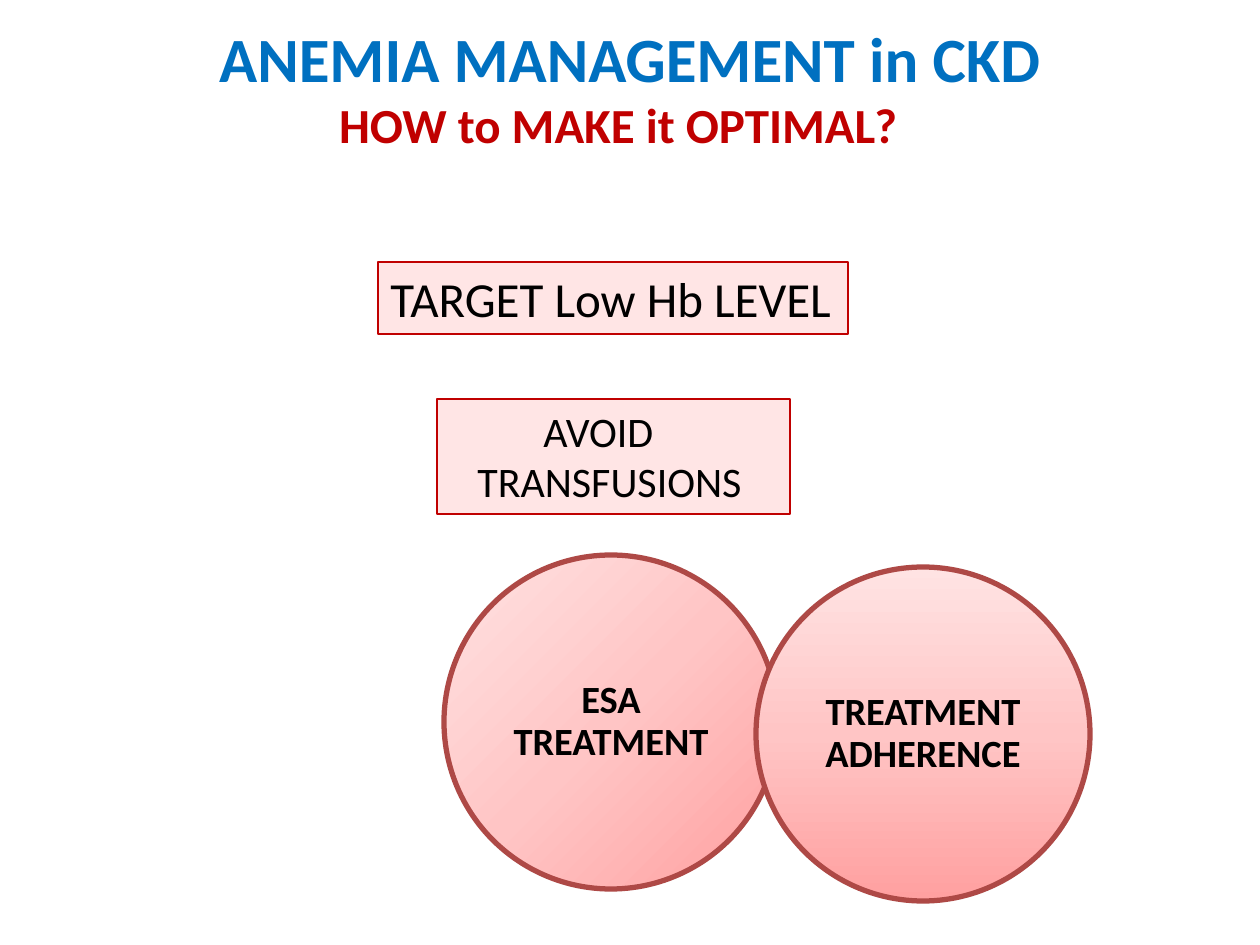
"""Build the slide on optimal anemia management in CKD."""
from dataclasses import dataclass

from lxml import etree
from pptx import Presentation
from pptx import util as u
from pptx.dml.color import RGBColor
from pptx.enum import shapes, text
from pptx.oxml import ns

PX = 914400 / 126


@dataclass(frozen=True)
class Theme:
    """Colours and type sizes."""
    font: str = "Calibri"
    ink: str = "000000"
    title: str = "0070C0"
    accent: str = "C00000"
    box: str = "FFE5E5"
    ring: str = "AE4946"
    stops: tuple = ((0, "FFA0A0"), (50, "FFC5C5"), (100, "FFE3E3"))
    title_size: int = 36
    large: int = 28
    medium: int = 24
    small: int = 22


THEME = Theme()
DIAGONAL = ("path", {"path": "circle"})
VERTICAL = ("lin", {"ang": str(270 * 60000), "scaled": "0"})


def px(length):
    """Turn pixels into EMU."""
    return u.Emu(round(length * PX))


def write(frame, lines, align, anchor, bold=False, spacing=None):
    """Write lines of (words, size, colour, left indent, right indent)."""
    frame.word_wrap = True
    frame.vertical_anchor = anchor
    for number, (words, size, color, left, right) in enumerate(lines):
        paragraph = frame.add_paragraph() if number else frame.paragraphs[0]
        paragraph.alignment = align
        paragraph.line_spacing = spacing
        properties = paragraph._p.get_or_add_pPr()
        properties.set("marL", str(px(left)))
        properties.set("marR", str(px(right)))
        run = paragraph.add_run()
        run.text = words
        run.font.name = THEME.font
        run.font.size = u.Pt(size)
        run.font.bold = bold
        run.font.color.rgb = RGBColor.from_string(color)


def add_outlined(slide, kind, place, color, width):
    """Add a preset shape with an outline and no shadow."""
    shape = slide.shapes.add_shape(kind, *map(px, place))
    shape.shadow.inherit = False
    shape.line.color.rgb = RGBColor.from_string(color)
    shape.line.width = u.Pt(width)
    return shape


def add_heading(slide, place, lines):
    """Add the centred heading."""
    heading = slide.shapes.add_textbox(*map(px, place))
    write(heading.text_frame, lines, text.PP_ALIGN.CENTER,
          text.MSO_ANCHOR.MIDDLE, bold=True)


def add_goal(slide, place, lines):
    """Add a pale box that states a goal."""
    goal = add_outlined(slide, shapes.MSO_SHAPE.RECTANGLE, place, THEME.accent, 0.75)
    goal.fill.solid()
    goal.fill.fore_color.rgb = RGBColor.from_string(THEME.box)
    write(goal.text_frame, lines, text.PP_ALIGN.LEFT, text.MSO_ANCHOR.TOP)


def shade(shape, direction):
    """Give a shape the theme gradient in a direction."""
    shape.fill.gradient()
    gradient = shape._element.spPr.find(ns.qn("a:gradFill"))
    for child in list(gradient):
        gradient.remove(child)
    stops = etree.SubElement(gradient, ns.qn("a:gsLst"))
    for percent, color in THEME.stops:
        stop = etree.SubElement(stops, ns.qn("a:gs"), pos=str(percent * 1000))
        etree.SubElement(stop, ns.qn("a:srgbClr"), val=color)
    tag, settings = direction
    course = etree.SubElement(gradient, ns.qn(f"a:{tag}"), settings)
    if tag == "path":
        etree.SubElement(course, ns.qn("a:fillToRect"), l="100000", t="100000")


def add_factor(slide, left, top, words, direction):
    """Add a shaded circle that names a treatment factor."""
    factor = add_outlined(slide, shapes.MSO_SHAPE.OVAL, (left, top, 334, 334),
                          THEME.ring, 3)
    shade(factor, direction)
    frame = factor.text_frame
    frame.margin_left = frame.margin_right = px(19)
    frame.margin_top = frame.margin_bottom = px(4)
    write(frame, [(words, THEME.small, THEME.ink, 0, 0)], text.PP_ALIGN.CENTER,
          text.MSO_ANCHOR.MIDDLE, bold=True, spacing=0.9)


def main():
    """Build and save the slide."""
    deck = Presentation()
    deck.slide_width, deck.slide_height = px(1260), px(945)
    slide = deck.slides.add_slide(deck.slide_layouts[6])
    add_heading(slide, (63, 8, 1134, 157), [
        ("ANEMIA MANAGEMENT in CKD", THEME.title_size, THEME.title, 0, 0),
        ("HOW to MAKE it OPTIMAL?", THEME.large, THEME.accent, 0, 24),
    ])
    add_goal(slide, (378, 262, 470, 72), [
        ("TARGET Low Hb LEVEL", THEME.large, THEME.ink, 0, 0),
    ])
    add_goal(slide, (437, 399, 353, 115), [
        ("AVOID", THEME.medium, THEME.ink, 94, 0),
        ("TRANSFUSIONS", THEME.medium, THEME.ink, 28, 0),
    ])
    add_factor(slide, 444, 555, "ESA TREATMENT", DIAGONAL)
    add_factor(slide, 756, 567, "TREATMENT ADHERENCE", VERTICAL)
    deck.save("out.pptx")


if __name__ == "__main__":
    main()
